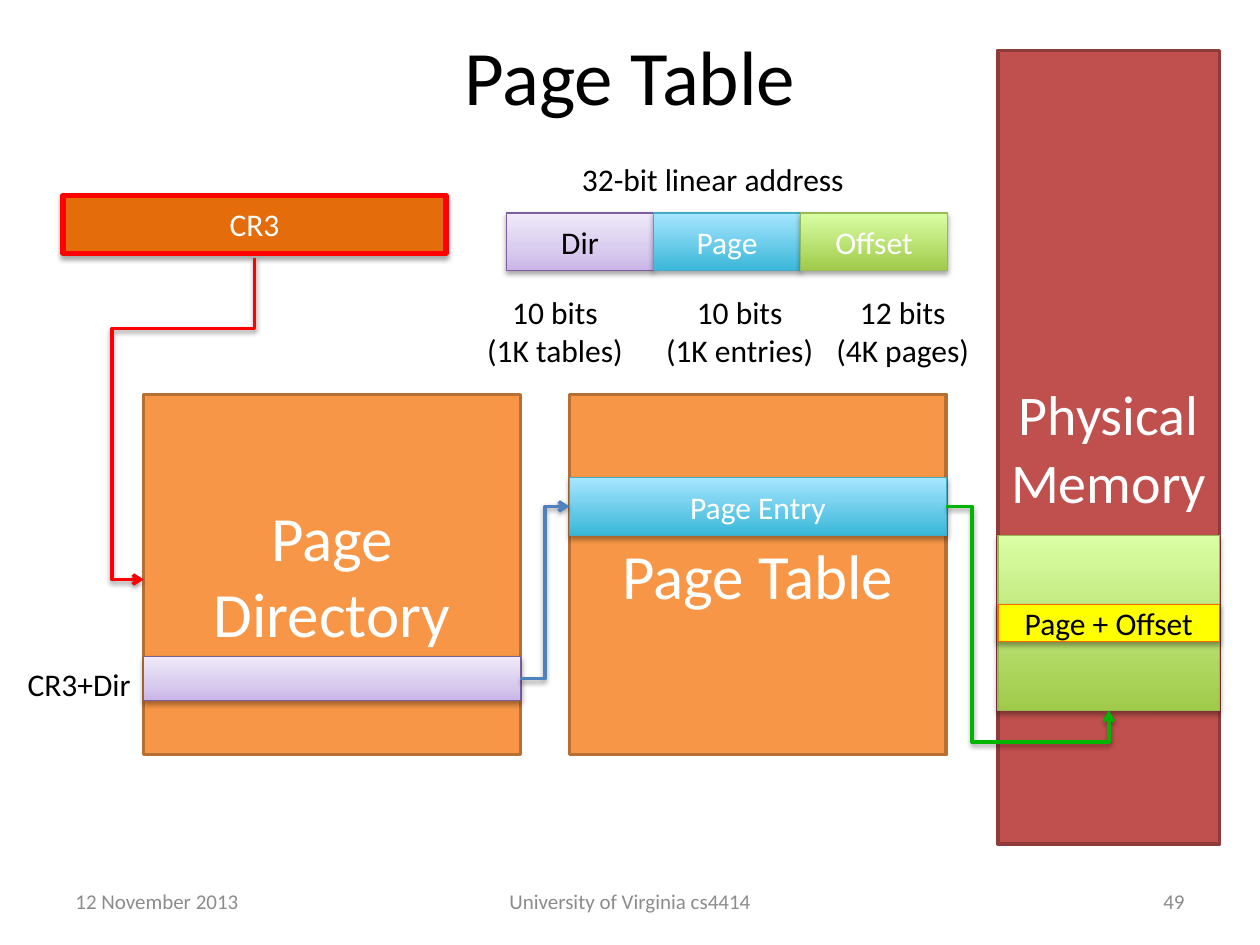
import copy
import dataclasses

import lxml.etree
import pptx
import pptx.dml.color
import pptx.enum.shapes
import pptx.enum.text
import pptx.oxml.ns
import pptx.util

RGBColor = pptx.dml.color.RGBColor
Align = pptx.enum.text.PP_ALIGN
Anchor = pptx.enum.text.MSO_ANCHOR
qn = pptx.oxml.ns.qn

BLACK = RGBColor(0x00, 0x00, 0x00)
WHITE = RGBColor(0xFF, 0xFF, 0xFF)
GREY = RGBColor(0x8C, 0x8C, 0x8C)
RED = RGBColor(0xFF, 0x00, 0x00)
BLUE = RGBColor(0x4F, 0x81, 0xBD)
GREEN = RGBColor(0x00, 0xB5, 0x01)
YELLOW = RGBColor(0xFF, 0xFF, 0x00)
YELLOW_EDGE = RGBColor(0xFF, 0x66, 0x00)
REGISTER = RGBColor(0xE4, 0x6C, 0x0A)
TABLE = RGBColor(0xF7, 0x96, 0x46)
TABLE_EDGE = RGBColor(0xB7, 0x6F, 0x34)
MEMORY = RGBColor(0xC0, 0x50, 0x4D)
MEMORY_EDGE = RGBColor(0x8E, 0x3B, 0x39)
DIR_EDGE = RGBColor(0x7D, 0x60, 0xA0)
PAGE_EDGE = RGBColor(0x46, 0xAA, 0xC5)
OFFSET_EDGE = RGBColor(0x98, 0xB9, 0x55)

# Gradients run from bottom to top: (position, colour).
DIR = ((0, RGBColor(0xC9, 0xB5, 0xE8)), (0.35, RGBColor(0xD8, 0xCB, 0xEE)),
       (1, RGBColor(0xF0, 0xEA, 0xF9)))
PAGE = ((0, RGBColor(0x39, 0xB7, 0xD8)), (1, RGBColor(0xA7, 0xE6, 0xFF)))
OFFSET = ((0, RGBColor(0xA0, 0xCA, 0x4A)), (1, RGBColor(0xDA, 0xFF, 0xA5)))


@dataclasses.dataclass
class Box:
    left: float
    top: float
    width: float
    height: float

    def point(self, x, y):
        """Point at the given percentages of the box."""
        return self.left + self.width * x / 100, self.top + self.height * y / 100

    def inner(self, x, y, width, height):
        """Inner box at the given percentages of this box."""
        return Box(*self.point(x, y), self.width * width / 100, self.height * height / 100)

    def lengths(self):
        return [pptx.util.Inches(value) for value in dataclasses.astuple(self)]


PAGE_AREA = Box(0, 0, 10, 7.5)


def write(shape, text, size, color, align):
    frame = shape.text_frame
    for index, line in enumerate(text.split("\n")):
        paragraph = frame.add_paragraph() if index else frame.paragraphs[0]
        paragraph.alignment = align
        run = paragraph.add_run()
        run.text = line
        run.font.name = "Calibri"
        run.font.size = pptx.util.Pt(size)
        run.font.color.rgb = color


def add_label(slide, box, text, size=18, color=BLACK, align=Align.CENTER,
              anchor=Anchor.TOP, wrap=False):
    shape = slide.shapes.add_textbox(*box.lengths())
    shape.text_frame.word_wrap = wrap
    shape.text_frame.vertical_anchor = anchor
    write(shape, text, size, color, align)


def add_shadow(effects, opacity=35, distance=1.8):
    shadow = lxml.etree.SubElement(
        effects, qn("a:outerShdw"), blurRad=str(pptx.util.Pt(3.1)),
        dist=str(pptx.util.Pt(distance)), dir="5400000", rotWithShape="0")
    color = lxml.etree.SubElement(shadow, qn("a:srgbClr"), val="000000")
    lxml.etree.SubElement(color, qn("a:alpha"), val=str(opacity * 1000))


def fill_gradient(shape, stops):
    shape.fill.gradient()
    shape.fill.gradient_angle = 90
    stop_list = shape._element.spPr.find(".//" + qn("a:gsLst"))
    while len(stop_list) < len(stops):
        stop_list.insert(1, copy.deepcopy(stop_list[0]))
    for stop, (position, color) in zip(shape.fill.gradient_stops, stops):
        stop.position = position
        stop.color.rgb = color


def add_block(slide, box, fill, edge, text="", size=18, color=WHITE,
              edge_width=0.75, shadow=True):
    shape = slide.shapes.add_shape(pptx.enum.shapes.MSO_SHAPE.RECTANGLE, *box.lengths())
    if isinstance(fill, RGBColor):
        shape.fill.solid()
        shape.fill.fore_color.rgb = fill
    else:
        fill_gradient(shape, fill)
    shape.line.color.rgb = edge
    shape.line.width = pptx.util.Pt(edge_width)
    shape.shadow.inherit = False
    if shadow:
        add_shadow(shape._element.spPr.find(qn("a:effectLst")))
    if text:
        shape.text_frame.vertical_anchor = Anchor.MIDDLE
        write(shape, text, size, color, Align.CENTER)


def add_bent_arrow(slide, start, end, color, bends=(), turned=False):
    """Bent arrow; bends are percentages, turned makes it leave downwards."""
    (x1, y1), (x2, y2) = start, end
    if turned:
        middle_x, middle_y = (x1 + x2) / 2, (y1 + y2) / 2
        half_width, half_height = (y2 - y1) / 2, (x1 - x2) / 2
        x1, x2 = middle_x - half_width, middle_x + half_width
        y1, y2 = middle_y - half_height, middle_y + half_height
    arrow = slide.shapes.add_connector(
        pptx.enum.shapes.MSO_CONNECTOR.ELBOW,
        *[pptx.util.Inches(value) for value in (x1, y1, x2, y2)])
    arrow.line.color.rgb = color
    arrow.line.width = pptx.util.Pt(2)
    properties = arrow._element.spPr
    if turned:
        properties.find(qn("a:xfrm")).set("rot", "5400000")
    if bends:
        geometry = properties.find(qn("a:prstGeom"))
        geometry.set("prst", "bentConnector4")
        guides = geometry.find(qn("a:avLst"))
        for number, bend in enumerate(bends, 1):
            lxml.etree.SubElement(guides, qn("a:gd"), name=f"adj{number}",
                                  fmla=f"val {round(bend * 1000)}")
    lxml.etree.SubElement(properties.find(qn("a:ln")), qn("a:tailEnd"), type="arrow")
    add_shadow(lxml.etree.SubElement(properties, qn("a:effectLst")), 38, 1.6)


def add_footer(slide, box):
    for x, width, text, align in ((0, 25.9, "12 November 2013", Align.LEFT),
                                  (32.4, 35.2, "University of Virginia cs4414", Align.CENTER),
                                  (74.1, 25.9, "49", Align.RIGHT)):
        add_label(slide, box.inner(x, 0, width, 100), text, 12, GREY, align,
                  Anchor.MIDDLE, True)


def add_address(slide, box):
    add_label(slide, box.inner(14.29, 0, 66, 22.6), "32-bit linear address", align=Align.LEFT)
    fields = (("Dir", DIR, DIR_EDGE, BLACK, "10 bits\n(1K tables)", -7.43, 36.86),
              ("Page", PAGE, PAGE_EDGE, WHITE, "10 bits\n(1K entries)", 33.14, 39.43),
              ("Offset", OFFSET, OFFSET_EDGE, WHITE, "12 bits\n(4K pages)", 71.71, 36.29))
    for column, (name, fill, edge, color, note, x, width) in enumerate(fields):
        field = box.inner(column * 100 / 3, 26.5, 100 / 3, 26)
        add_block(slide, field, fill, edge, name, color=color)
        add_label(slide, box.inner(x, 59.8, width, 40.2), note)


def add_lookup_table(slide, box, name, entry, fill, edge, entry_text=""):
    add_block(slide, box, TABLE, TABLE_EDGE, name, 36, edge_width=2, shadow=False)
    add_block(slide, entry, fill, edge, entry_text)


def add_memory(slide, box, frame):
    add_block(slide, box, MEMORY, MEMORY_EDGE, "Physical Memory", 32,
              edge_width=2, shadow=False)
    add_block(slide, frame, OFFSET, OFFSET_EDGE)
    add_block(slide, frame.inner(0, 39.6, 100, 20.9), YELLOW, YELLOW_EDGE,
              "Page + Offset", color=BLACK)


def build_slide(slide, area):
    register = area.inner(5, 20.67, 30.4, 6.13)
    directory = area.inner(11.4, 41.73, 29.9, 38.13)
    page_table = area.inner(45.2, 41.73, 29.9, 38.13)
    memory = area.inner(79.2, 5.33, 17.6, 84)
    dir_entry = directory.inner(0, 72.73, 100, 12.24)
    page_entry = page_table.inner(0, 23.08, 100, 16.08)
    frame = memory.inner(0, 61.1, 100, 22.06)

    add_footer(slide, area.inner(5, 92.67, 90, 5.33))
    add_label(slide, area.inner(5, 2.4, 90, 16.67), "Page Table", 44, wrap=True)
    add_block(slide, register, REGISTER, RED, "CR3", edge_width=3)
    add_address(slide, area.inner(40.2, 16.27, 35, 23.6))
    add_lookup_table(slide, directory, "Page Directory", dir_entry, DIR, DIR_EDGE)
    add_label(slide, directory.inner(-34.1, 73.4, 34.4, 14), "CR3+Dir", align=Align.LEFT)
    add_lookup_table(slide, page_table, "Page Table", page_entry, PAGE, PAGE_EDGE, "Page Entry")
    add_memory(slide, memory, frame)

    add_bent_arrow(slide, register.point(50, 108), directory.point(0, 51.4), RED,
                   (22, 128.5), turned=True)
    add_bent_arrow(slide, dir_entry.point(100, 50), page_entry.point(0, 50), BLUE)
    add_bent_arrow(slide, page_entry.point(100, 50), frame.point(50, 100), GREEN, (16, 115.5))


def main():
    presentation = pptx.Presentation()
    presentation.slide_width = pptx.util.Inches(PAGE_AREA.width)
    presentation.slide_height = pptx.util.Inches(PAGE_AREA.height)
    slide = presentation.slides.add_slide(presentation.slide_layouts[6])
    build_slide(slide, PAGE_AREA)
    presentation.save("out.pptx")


if __name__ == "__main__":
    main()
